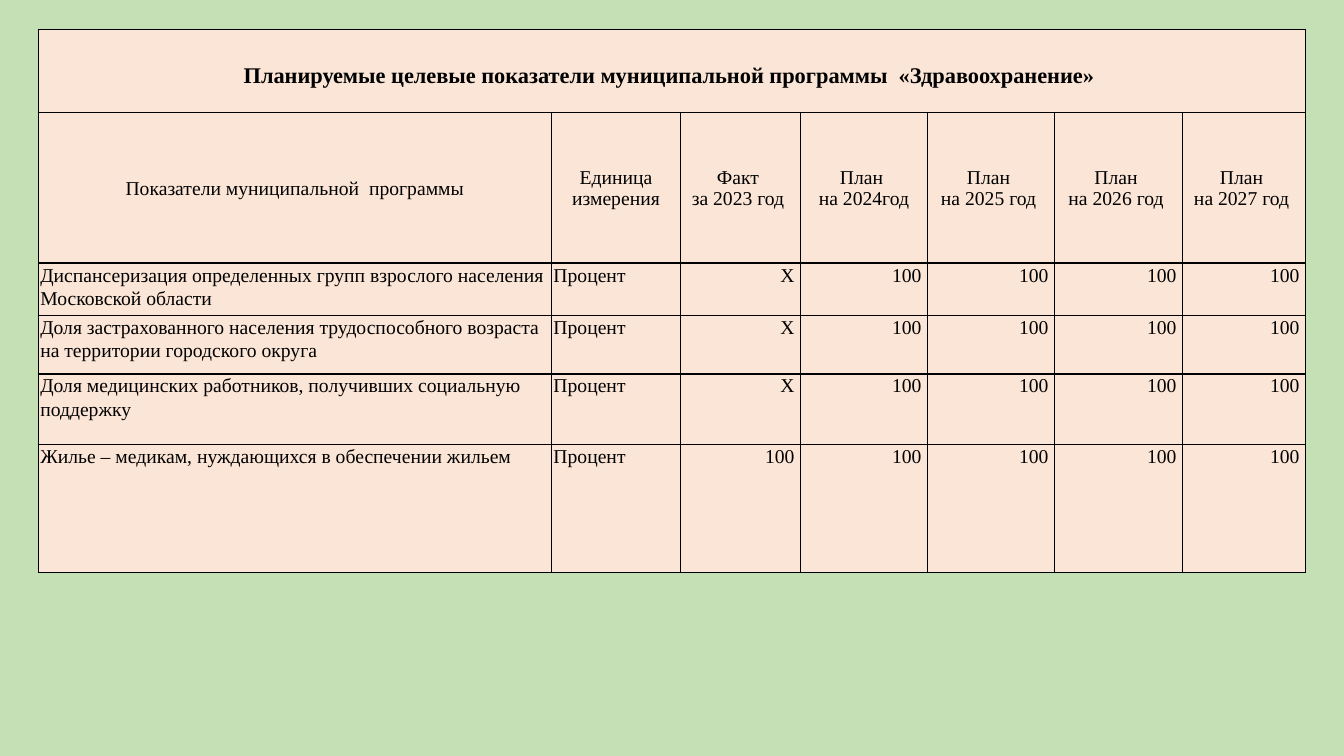
"""Build a slide with the target indicators of a health care programme."""
import pptx
import pptx.dml.color
import pptx.enum.text
import pptx.oxml
import pptx.oxml.ns
import pptx.util

Inches = pptx.util.Inches
Align = pptx.enum.text.PP_ALIGN
Anchor = pptx.enum.text.MSO_ANCHOR
GREEN = pptx.dml.color.RGBColor(0xC5, 0xE0, 0xB4)
PEACH = pptx.dml.color.RGBColor(0xFB, 0xE5, 0xD6)
BLACK = pptx.dml.color.RGBColor(0, 0, 0)
FONT = "Times New Roman"
WIDTHS = [5.09, 1.28, 1.19, 1.26, 1.26, 1.27, 1.22]
HEIGHTS = [0.83, 1.49, 0.52, 0.58, 0.7, 1.27]
TITLE = "Планируемые целевые показатели муниципальной программы  «Здравоохранение» "
HEADS = [
    ["Показатели муниципальной  программы"],
    ["Единица измерения"],
    ["Факт ", "за 2023 год "],
    ["План ", " на 2024год "],
    ["План ", "на 2025 год "],
    ["План ", "на 2026 год "],
    ["План ", "на 2027 год "],
]
GOALS = [
    ("Диспансеризация определенных групп взрослого населения Московской области ", "X"),
    ("Доля застрахованного населения трудоспособного возраста на территории городского округа", "X"),
    ("Доля медицинских работников, получивших социальную поддержку", "X"),
    ("Жилье – медикам, нуждающихся в обеспечении жильем", "100"),
]


def add_edges(cell):
    props = cell._tc.get_or_add_tcPr()
    space = pptx.oxml.ns.nsdecls("a")
    for place, side in enumerate(("lnL", "lnR", "lnT", "lnB")):
        edge = pptx.oxml.parse_xml(
            f'<a:{side} {space} w="{pptx.util.Pt(1)}"><a:solidFill>'
            f'<a:srgbClr val="{BLACK}"/></a:solidFill></a:{side}>')
        props.insert(place, edge)


def style_cell(cell, anchor, pads):
    cell.fill.solid()
    cell.fill.fore_color.rgb = PEACH
    cell.vertical_anchor = anchor
    left, top, right, base = map(Inches, pads)
    cell.margin_left, cell.margin_top = left, top
    cell.margin_right, cell.margin_bottom = right, base
    add_edges(cell)


def write_cell(cell, lines, align, size=14, bold=False, spacing=None):
    frame = cell.text_frame
    for count, line in enumerate(lines):
        para = frame.add_paragraph() if count else frame.paragraphs[0]
        para.alignment = align
        para.line_spacing = spacing
        run = para.add_run()
        run.text = line
        font = run.font
        font.name, font.size, font.bold = FONT, pptx.util.Pt(size), bold
        font.color.rgb = BLACK


def add_grid(slide):
    frame = slide.shapes.add_table(
        len(HEIGHTS), len(WIDTHS), Inches(0.38), Inches(0.29),
        Inches(sum(WIDTHS)), Inches(sum(HEIGHTS)))
    table = frame.table
    table.first_row = table.horz_banding = False
    for column, width in zip(table.columns, WIDTHS):
        column.width = Inches(width)
    for row, height in zip(table.rows, HEIGHTS):
        row.height = Inches(height)
    return table


def fill_heads(table):
    for cell in table.rows[0].cells:
        style_cell(cell, Anchor.BOTTOM, (0.01, 0.01, 0.01, 0.24))
    title = table.cell(0, 0)
    title.merge(table.cell(0, len(WIDTHS) - 1))
    write_cell(title, [TITLE], Align.CENTER, 16, True)
    for cell, lines in zip(table.rows[1].cells, HEADS):
        style_cell(cell, Anchor.MIDDLE, (0.01, 0.01, 0.01, 0))
        write_cell(cell, lines, Align.CENTER)


def fill_goals(table):
    for number, (goal, fact) in enumerate(GOALS, 2):
        values = [goal, "Процент", fact] + ["100"] * 4
        for column, value in enumerate(values):
            cell = table.cell(number, column)
            align = Align.LEFT if column < 2 else Align.RIGHT
            pads = (0.02, 0, 0, 0) if column < 2 else (0, 0, 0.06, 0)
            style_cell(cell, Anchor.TOP, pads)
            write_cell(cell, [value], align, spacing=1.07)


def main():
    deck = pptx.Presentation()
    deck.slide_width, deck.slide_height = Inches(13.33), Inches(7.5)
    slide = deck.slides.add_slide(deck.slide_layouts[6])
    back = slide.background.fill
    back.solid()
    back.fore_color.rgb = GREEN
    table = add_grid(slide)
    fill_heads(table)
    fill_goals(table)
    deck.save("out.pptx")


if __name__ == "__main__":
    main()
